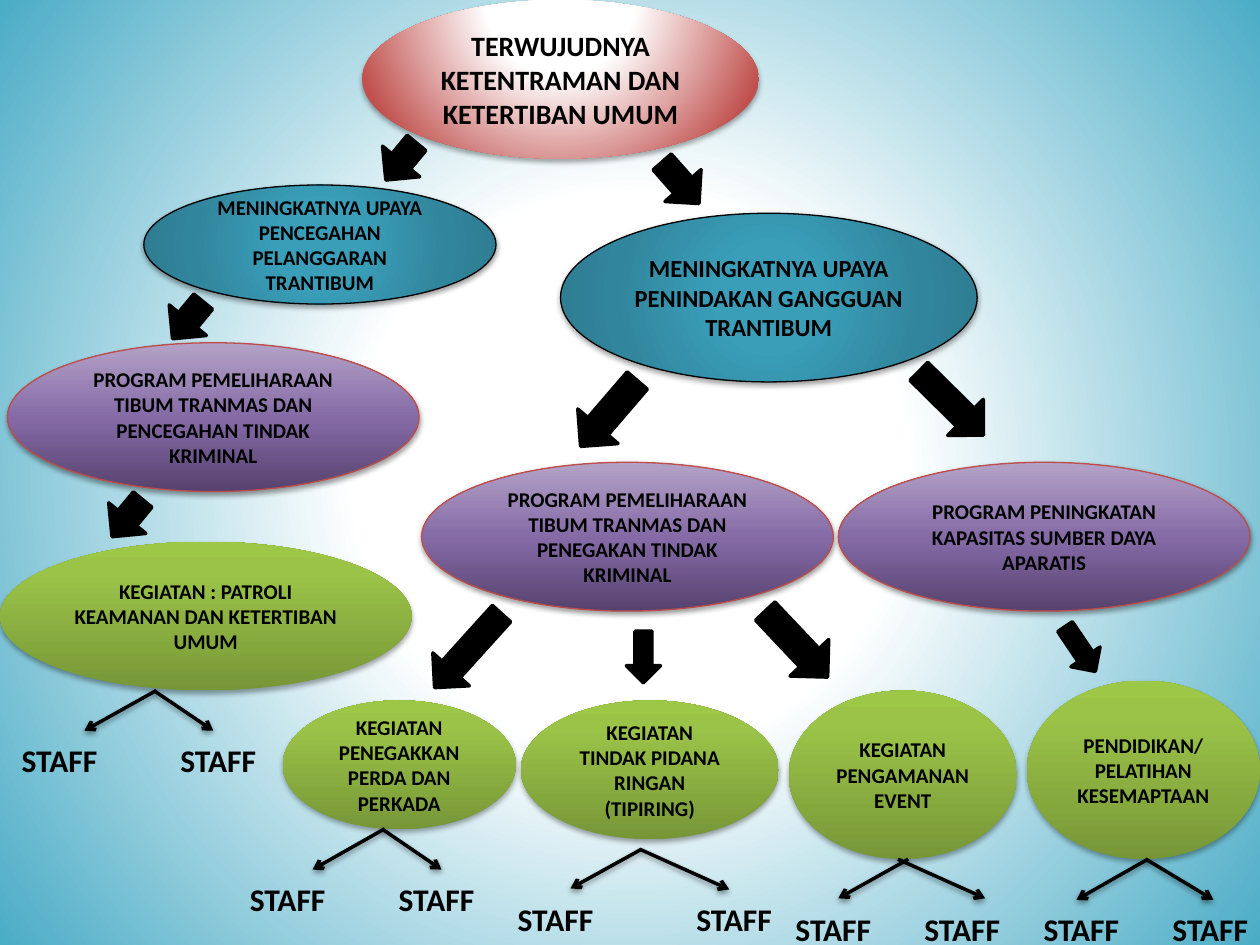
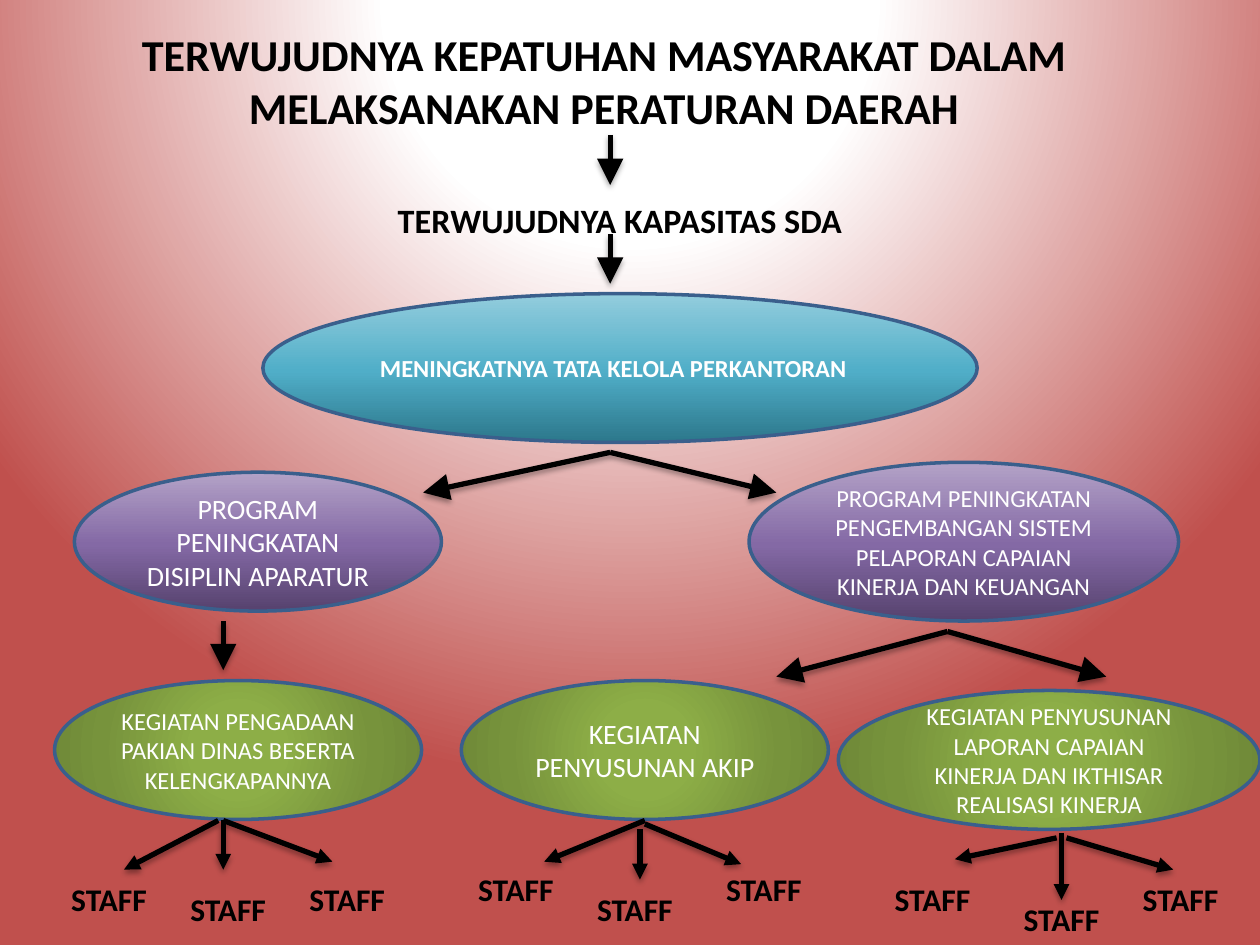
"""Build two goal trees, one for public order and one for office management."""
from lxml import etree
from pptx import Presentation
from pptx.dml.color import RGBColor
from pptx.enum.shapes import MSO_CONNECTOR, MSO_SHAPE
from pptx.enum.text import MSO_ANCHOR, PP_ALIGN
from pptx.oxml.ns import qn
from pptx.util import Cm, Pt

OVAL = MSO_SHAPE.OVAL
ARROW = MSO_SHAPE.RIGHT_ARROW
LINE = MSO_CONNECTOR.STRAIGHT
LEFT, MID = PP_ALIGN.LEFT, PP_ALIGN.CENTER
MIDDLE = MSO_ANCHOR.MIDDLE

HUE = {"ink": "000000", "white": "FFFFFF", "red": "C0504D",
       "rim": "BF4C48", "blue": "3A5F8C", "aqua": "4BACC6"}
CORE = (50, 50, 50, 50)
TOP = (50, -80, 50, 180)
GRAD = {
    "sky": ([(0, HUE["white"]), (35, HUE["white"]), (100, HUE["aqua"])], CORE),
    "rose": ([(0, HUE["white"]), (31, HUE["white"]), (100, HUE["red"])], TOP),
    "goal": ([(0, HUE["white"]), (35, HUE["white"]), (100, HUE["red"])], TOP),
    "teal": ([(0, "3A9EB9"), (23, "3A9EB9"), (69, "31859C"), (97, "2E7C91")], CORE),
    "moss": ([(0, "8DAE47"), (23, "8DAE47"), (69, "77933C"), (97, "6F8938")], CORE),
    "lime": ([(0, "779737"), (80, "9BC348"), (100, "9DC746")], None),
    "plum": ([(0, "56426E"), (48, "8469A5"), (100, "B3A2C7")], None),
    "lake": ([(0, "2C778B"), (48, "50AEC8"), (100, "93CDDD")], None),
}
RIM = {"teal": HUE["ink"], "plum": HUE["rim"]}


def write(shape, text, size=18, bold=True, hue="ink", align=MID):
    """Put formatted text in the middle of a shape."""
    frame = shape.text_frame
    frame.word_wrap = True
    frame.vertical_anchor = MIDDLE
    para = frame.paragraphs[0]
    para.alignment = align
    run = para.add_run()
    run.text = text
    run.font.name = "Calibri"
    run.font.size = Pt(size)
    run.font.bold = bold
    run.font.color.rgb = RGBColor.from_string(HUE[hue])


def dress(props, grad=None, shade=None):
    """Swap a solid fill for a gradient and cast a shadow (alpha, distance)."""
    if grad:
        stops, rect = GRAD[grad]
        fill = etree.Element(qn("a:gradFill"), rotWithShape="1")
        row = etree.SubElement(fill, qn("a:gsLst"))
        for pos, tint in stops:
            stop = etree.SubElement(row, qn("a:gs"), pos=str(pos * 1000))
            etree.SubElement(stop, qn("a:srgbClr"), val=tint)
        if rect:
            way = etree.SubElement(fill, qn("a:path"), path="circle")
            etree.SubElement(way, qn("a:fillToRect"),
                             {side: str(part * 1000) for side, part in zip("ltrb", rect)})
        else:
            etree.SubElement(fill, qn("a:lin"), ang="16200000", scaled="0")
        props.replace(props.find(qn("a:solidFill")), fill)
    if shade:
        alpha, dist = shade
        glow = props.find(qn("a:effectLst"))
        if glow is None:
            glow = etree.SubElement(props, qn("a:effectLst"))
        cast = etree.SubElement(glow, qn("a:outerShdw"), blurRad="40000",
                                dist=str(dist), dir="5400000", rotWithShape="0")
        tone = etree.SubElement(cast, qn("a:srgbClr"), val=HUE["ink"])
        etree.SubElement(tone, qn("a:alpha"), val=str(alpha * 1000))


SOFT, FIRM = (35, 23000), (38, 20000)
ORDER = {
    "back": "sky", "heads": [],
    "ovals": [
        (7.3, 0, 8, 3.2, "goal", 16, "TERWUJUDNYA KETENTRAMAN DAN KETERTIBAN UMUM"),
        (11.3, 4.3, 8.4, 3.4, "teal", 14, "MENINGKATNYA UPAYA PENINDAKAN GANGGUAN TRANTIBUM"),
        (2.9, 3.73, 7.1, 2.4, "teal", 12, "MENINGKATNYA UPAYA PENCEGAHAN PELANGGARAN TRANTIBUM"),
        (0, 10.92, 8.3, 3, "lime", 12, "KEGIATAN : PATROLI KEAMANAN DAN KETERTIBAN UMUM"),
        (0.15, 6.91, 8.3, 3, "plum", 12,
         "PROGRAM PEMELIHARAAN TIBUM TRANMAS DAN PENCEGAHAN TINDAK KRIMINAL"),
        (16.9, 9.32, 8.3, 3, "plum", 12, "PROGRAM PENINGKATAN KAPASITAS SUMBER DAYA APARATIS"),
        (8.5, 9.32, 8.3, 3, "plum", 12,
         "PROGRAM PEMELIHARAAN TIBUM TRANMAS DAN PENEGAKAN TINDAK KRIMINAL"),
        (10.5, 14.12, 5.2, 2.8, "lime", 12, "KEGIATAN TINDAK PIDANA RINGAN (TIPIRING)"),
        (5.7, 14.12, 4.7, 2.6, "lime", 12, "KEGIATAN PENEGAKKAN PERDA DAN PERKADA"),
        (15.9, 13.92, 4.6, 3.4, "lime", 12, "KEGIATAN PENGAMANAN EVENT"),
        (20.7, 13.72, 4.7, 3.6, "lime", 12, "PENDIDIKAN/ PELATIHAN KESEMAPTAAN"),
    ],
    "staff": [(-0.9, 14.32), (2.3, 14.32), (3.7, 17.12), (6.7, 17.12), (9.1, 17.53),
              (12.7, 17.53), (14.7, 17.73), (17.3, 17.73), (19.7, 17.73), (22.3, 17.73)],
    "lines": [],
    "twigs": [
        (3.1, 13.92, 4.3, 14.73), (3.15, 13.92, 1.7, 14.73),
        (7.7, 16.71, 8.9, 17.53), (7.75, 16.71, 6.3, 17.53),
        (12.93, 17.12, 11.5, 17.91), (12.9, 17.12, 14.7, 17.93),
        (18.1, 17.32, 19.86, 18.11), (18.31, 17.32, 16.9, 18.11),
        (23.14, 17.32, 21.7, 18.14), (23.1, 17.32, 24.46, 18.14),
    ],
    "blocks": [
        (7.6, 2.77, 0.97, 0.97, 129.5), (13.16, 3.2, 1.12, 0.97, 48.5),
        (3.3, 5.97, 0.97, 0.97, 129.5), (2.08, 9.96, 0.97, 0.97, 129.5),
        (11.4, 7.8, 1.75, 1.07, 130.7), (18.26, 7.62, 1.83, 1.02, 44.6),
        (8.43, 12.62, 2.01, 0.99, 132.1), (12.45, 12.9, 1.04, 0.69, 90),
        (15.14, 12.45, 1.83, 1.07, 46.6), (21.23, 12.73, 1.09, 0.71, 55.9),
    ],
    "tip": "arrow", "width": 2, "shade": FIRM, "rim": None, "font": {},
}
OFFICE = {
    "back": "rose",
    "heads": [
        (1.27, 0.33, 21.82, 2.59, 25.2,
         "TERWUJUDNYA KEPATUHAN MASYARAKAT DALAM MELAKSANAKAN PERATURAN DAERAH"),
        (2.5, 3.73, 20, 1.4, 19.5, "TERWUJUDNYA KAPASITAS SDA"),
    ],
    "ovals": [
        (1.5, 9.52, 7.4, 2.8, "plum", 16, "PROGRAM PENINGKATAN DISIPLIN APARATUR"),
        (5.3, 5.92, 14.4, 3, "lake", 14, "MENINGKATNYA TATA KELOLA PERKANTORAN"),
        (15.1, 9.32, 8.66, 3.2, "plum", 14,
         "PROGRAM PENINGKATAN PENGEMBANGAN SISTEM PELAPORAN CAPAIAN KINERJA DAN KEUANGAN"),
        (1.1, 13.72, 7.4, 2.8, "moss", 14,
         "KEGIATAN PENGADAAN PAKIAN DINAS BESERTA KELENGKAPANNYA"),
        (9.3, 13.72, 7.4, 2.8, "moss", 16, "KEGIATAN PENYUSUNAN AKIP"),
        (16.9, 13.92, 8.5, 2.8, "moss", 14,
         "KEGIATAN PENYUSUNAN LAPORAN CAPAIAN KINERJA DAN IKTHISAR REALISASI KINERJA"),
    ],
    "staff": [(0.1, 17.12), (2.5, 17.32), (4.9, 17.12), (8.3, 16.92), (10.7, 17.32),
              (13.3, 16.92), (16.7, 17.12), (19.3, 17.53), (21.7, 17.12)],
    "lines": [
        (12.3, 2.72, 12.3, 3.73), (12.3, 4.72, 12.3, 5.72),
        (12.3, 9.12, 15.65, 9.93), (12.3, 9.12, 8.53, 9.93),
        (19.1, 12.73, 15.65, 13.64), (19.1, 12.73, 22.3, 13.64),
        (4.5, 12.52, 4.5, 13.51),
    ],
    "twigs": [
        (4.5, 16.54, 6.7, 17.37), (4.4, 16.54, 2.5, 17.53), (4.5, 16.54, 4.5, 17.53),
        (13, 16.54, 10.97, 17.37), (13, 16.61, 14.94, 17.42), (12.9, 16.71, 12.9, 17.73),
        (21.3, 16.89, 19.25, 17.32), (21.4, 16.79, 21.4, 18.14), (21.5, 16.89, 23.65, 17.53),
    ],
    "blocks": [],
    "tip": "triangle", "width": 3, "shade": SOFT, "rim": HUE["blue"],
    "font": {"hue": "white", "bold": False},
}

deck = Presentation()
deck.slide_width, deck.slide_height = Cm(25.4), Cm(19.05)
ink = RGBColor.from_string(HUE["ink"])

for tree in (ORDER, OFFICE):
    slide = deck.slides.add_slide(deck.slide_layouts[6])
    slide.background.fill.solid()
    slide.background.fill.fore_color.rgb = ink
    dress(slide.element.find(".//" + qn("p:bgPr")), tree["back"])
    shapes = slide.shapes

    for *spot, size, text in tree["heads"]:
        write(shapes.add_textbox(*map(Cm, spot)), text, size=size)

    for *spot, grad, size, text in tree["ovals"]:
        oval = shapes.add_shape(OVAL, *map(Cm, spot))
        oval.shadow.inherit = False
        oval.fill.solid()
        rim = tree["rim"] or RIM.get(grad)
        if rim:
            oval.line.color.rgb = RGBColor.from_string(rim)
            oval.line.width = Pt(2 if tree["rim"] else 0.75)
        else:
            oval.line.fill.background()
        shade = None if tree["rim"] else FIRM if rim else SOFT
        dress(oval.element.spPr, grad, shade)
        font = dict(tree["font"], size=size)
        if grad == "lake":
            font.update(bold=True, align=LEFT)
        write(oval, text, **font)

    for left, top in tree["staff"]:
        write(shapes.add_textbox(Cm(left), Cm(top), Cm(4.2), Cm(2)), "STAFF")

    for kind, head in (("lines", "lg"), ("twigs", "med")):
        for ends in tree[kind]:
            line = shapes.add_connector(LINE, *map(Cm, ends))
            line.line.color.rgb = ink
            line.line.width = Pt(tree["width"])
            props = line.element.spPr
            etree.SubElement(props.find(qn("a:ln")), qn("a:tailEnd"),
                             type=tree["tip"], w=head, len=head)
            dress(props, shade=tree["shade"])

    for *spot, turn in tree["blocks"]:
        block = shapes.add_shape(ARROW, *map(Cm, spot))
        block.shadow.inherit = False
        block.rotation = turn
        block.fill.solid()
        block.fill.fore_color.rgb = ink
        block.line.color.rgb = ink
        block.line.width = Pt(2)

deck.save("out.pptx")
